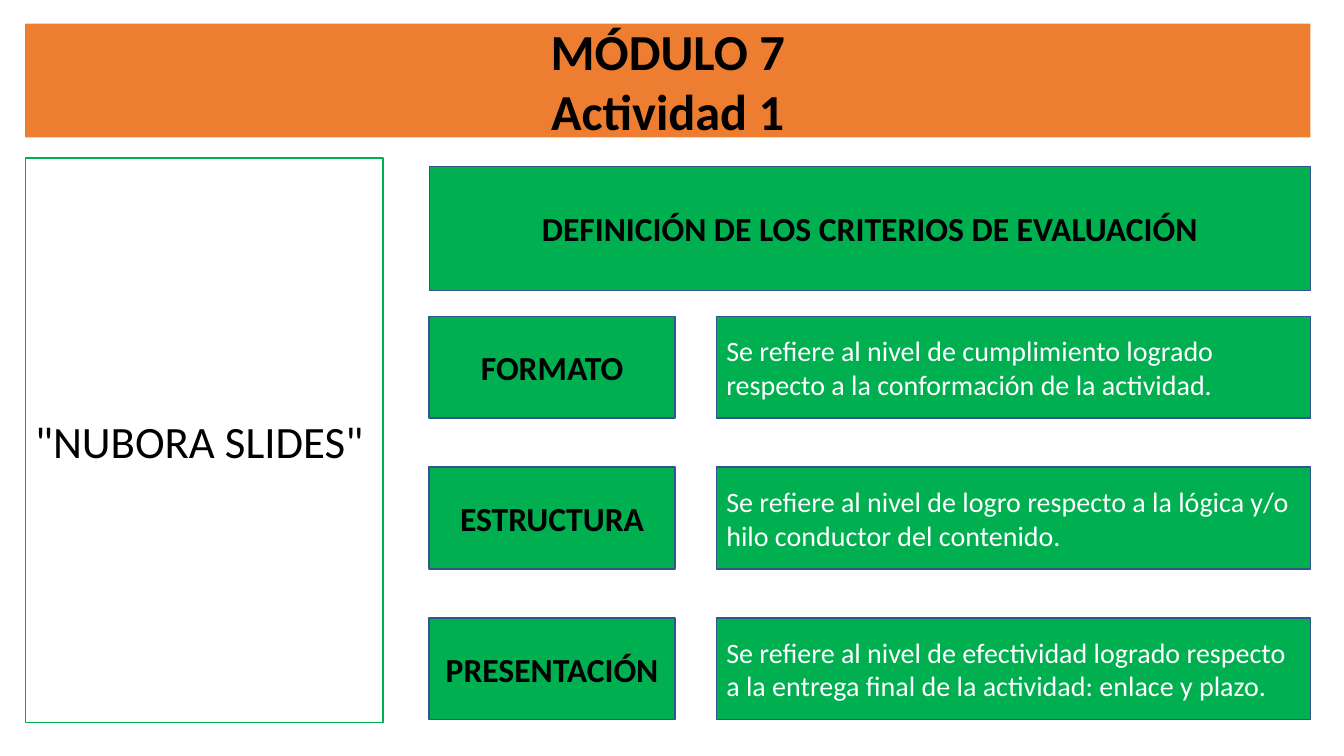
from pptx import Presentation
from pptx.dml.color import RGBColor
from pptx.enum.shapes import MSO_SHAPE as Shape
from pptx.enum.text import MSO_ANCHOR as Anchor, MSO_AUTO_SIZE as Auto, PP_ALIGN as Align
from pptx.util import Pt

GREEN, BLUE, ORANGE = "00B050", "325491", "ED7D31"
HEAD = {"name": "Calibri", "size": Pt(24), "bold": True}
BODY = {"name": "Calibri", "size": Pt(20), "bold": False}


def tint(hue):
    return RGBColor.from_string(hue)


def write(box, text, style, ink="000000", align=Align.CENTER):
    frame = box.text_frame
    frame.text = text
    frame.word_wrap = True
    frame.auto_size = Auto.NONE
    frame.vertical_anchor = Anchor.MIDDLE
    for para in frame.paragraphs:
        para.alignment = align
        for run in para.runs:
            for key, value in style.items():
                setattr(run.font, key, value)
            run.font.color.rgb = tint(ink)


deck = Presentation()
deck.slide_width, deck.slide_height = Pt(960), Pt(540)
slide = deck.slides.add_slide(deck.slide_layouts[5])

# Title banner
title = slide.shapes.title
place = {"left": 18, "top": 16.8, "width": 918, "height": 81.4}
for key, value in place.items():
    setattr(title, key, Pt(value))
title.fill.solid()
title.fill.fore_color.rgb = tint(ORANGE)
write(title, "MÓDULO 7\nActividad 1", HEAD | {"size": Pt(36)})

# Boxes: left, top, width, height, fill, line, then text format
white, black = "FFFFFF", "000000"
boxes = [
    (18, 113, 255.6, 403.2, None, GREEN,
     '"NUBORA SLIDES"', BODY | {"size": Pt(32)}, black, Align.LEFT),
    (306.7, 118.8, 629.3, 88.6, GREEN, BLUE,
     "DEFINICIÓN DE LOS CRITERIOS DE EVALUACIÓN", HEAD, black, Align.CENTER),
]
rules = [
    ("FORMATO", "Se refiere al nivel de cumplimiento logrado respecto "
     "a la conformación de la actividad."),
    ("ESTRUCTURA", "Se refiere al nivel de logro respecto a la lógica "
     "y/o hilo conductor del contenido."),
    ("PRESENTACIÓN", "Se refiere al nivel de efectividad logrado respecto "
     "a la entrega final de la actividad: enlace y plazo."),
]
for row, (name, text) in enumerate(rules):
    top = 226 + 107.7 * row
    boxes += [
        (306.5, top, 175.7, 72.7, GREEN, BLUE, name, HEAD, black, Align.CENTER),
        (511.7, top, 424.5, 72.7, GREEN, BLUE, text, BODY, white, Align.LEFT),
    ]

for left, top, width, height, fill, line, text, style, ink, align in boxes:
    box = slide.shapes.add_shape(
        Shape.RECTANGLE, Pt(left), Pt(top), Pt(width), Pt(height))
    box.shadow.inherit = False
    if fill:
        box.fill.solid()
        box.fill.fore_color.rgb = tint(fill)
    else:
        box.fill.background()
    box.line.color.rgb = tint(line)
    box.line.width = Pt(1)
    write(box, text, style, ink, align)

deck.save("out.pptx")
